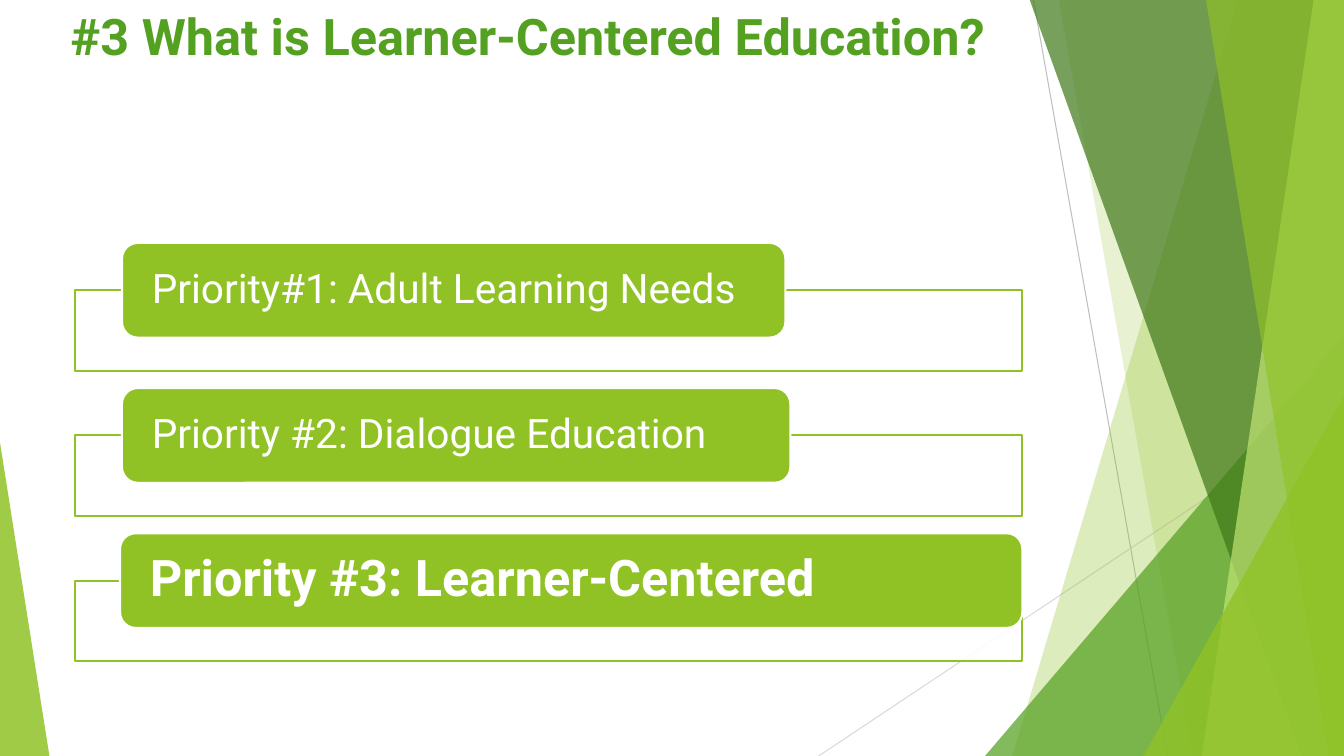
from dataclasses import dataclass

from lxml import etree
from pptx import Presentation
from pptx.dml.color import RGBColor
from pptx.enum.shapes import MSO_CONNECTOR, MSO_SHAPE
from pptx.enum.text import MSO_ANCHOR, PP_ALIGN
from pptx.oxml.ns import qn
from pptx.util import Pt

PX = 9144  # EMU per px, 100 px to the inch
WIDTH, HEIGHT = 1333, 750
BLEED = -1  # facets start just above the slide

RECT, ROUND_RECT = MSO_SHAPE.RECTANGLE, MSO_SHAPE.ROUNDED_RECTANGLE
TRIANGLE, STRAIGHT = MSO_SHAPE.ISOSCELES_TRIANGLE, MSO_CONNECTOR.STRAIGHT
CENTER, TOP, MIDDLE = PP_ALIGN.CENTER, MSO_ANCHOR.TOP, MSO_ANCHOR.MIDDLE
LEFT = PP_ALIGN.LEFT


@dataclass(frozen=True)
class Theme:
    font: str = "Roboto"
    lime: str = "90C226"
    green: str = "54A021"
    forest: str = "3F7819"
    pale: str = "C0E474"
    white: str = "FFFFFF"
    gray: str = "BFBFBF"
    light_gray: str = "D9D9D9"
    large: int = 36
    normal: int = 29
    hairline: float = 0.75
    outline: float = 1.5


THEME = Theme()

# Facets: top left, top right, bottom right, bottom left x; colour; opacity
BACK_FACETS = [
    (1228, WIDTH, WIDTH, 1004, THEME.lime, 30),
    (1050, WIDTH, WIDTH, 1183, THEME.lime, 20),
]
FRONT_FACETS = [
    (1021, WIDTH, WIDTH, 1291, THEME.forest, 70),
    (1303, WIDTH, WIDTH, 1192, THEME.pale, 70),
    (1196, WIDTH, WIDTH, 1318, THEME.lime, 65),
]

# Priorities: text, bar left, bar width, type size, bold
PRIORITIES = [
    ("Priority#1: Adult Learning Needs", 121, 658, THEME.normal, False),
    ("Priority #2: Dialogue Education", 121, 663, THEME.normal, False),
    ("Priority #3: Learner-Centered", 119, 895, THEME.large, True),
]
FIRST_BAR_TOP, PITCH = 241, 144
BAR_HEIGHT, FRAME_DROP = 94, 47


def rgb(color):
    return RGBColor.from_string(color)


def paint(sp, color, opacity=100, line=None):
    """Set fill, opacity and outline, without a shadow."""
    sp.shadow.inherit = False
    sp.fill.solid()
    sp.fill.fore_color.rgb = rgb(color)
    if opacity < 100:
        clr = sp.fill._xPr.find(qn("a:solidFill"))[0]
        etree.SubElement(clr, qn("a:alpha"), val=str(opacity * 1000))
    if line:
        sp.line.color.rgb = rgb(line)
        sp.line.width = Pt(THEME.outline)
    else:
        sp.line.fill.background()


def add_box(s, kind, x, y, w, h):
    return s.shapes.add_shape(kind, x * PX, y * PX, w * PX, h * PX)


def add_line(s, x1, y1, x2, y2, color):
    cxn = s.shapes.add_connector(STRAIGHT, x1 * PX, y1 * PX, x2 * PX, y2 * PX)
    cxn.line.color.rgb = rgb(color)
    cxn.line.width = Pt(THEME.hairline)
    etree.SubElement(cxn._element.spPr, qn("a:effectLst"))


def add_facet(s, top_left, top_right, bottom_right, bottom_left, color, opacity):
    fb = s.shapes.build_freeform(top_left, BLEED, scale=PX)
    fb.add_line_segments(
        [(top_right, BLEED), (bottom_right, HEIGHT), (bottom_left, HEIGHT)]
    )
    paint(fb.convert_to_shape(), color, opacity)


def add_corner(s, x, y, w, apex, color, opacity):
    """Triangle standing on the bottom edge; apex 0 is left, 1 is right."""
    sp = add_box(s, TRIANGLE, x, y, w, HEIGHT - y)
    sp.adjustments[0] = apex
    paint(sp, color, opacity)


def write(sp, text, frame, paragraph, font, color):
    """Put one paragraph in a shape, with its formats given as dicts."""
    tf = sp.text_frame
    p = tf.paragraphs[0]
    r = p.add_run()
    r.text = text
    font = {"name": THEME.font, **font}
    for target, formats in ((tf, frame), (p, paragraph), (r.font, font)):
        for name, value in formats.items():
            setattr(target, name, value)
    r.font.color.rgb = rgb(color)


def add_backdrop(s):
    add_line(s, 1025, 0, 1158, HEIGHT, THEME.gray)
    add_line(s, WIDTH, 403, 812, HEIGHT, THEME.light_gray)
    for facet in BACK_FACETS:
        add_facet(s, *facet)
    add_corner(s, 977, 333, 356, 1, THEME.green, 72)
    for facet in FRONT_FACETS:
        add_facet(s, *facet)
    add_corner(s, 1134, 393, 199, 1, THEME.lime, 80)
    add_corner(s, 0, 439, 49, 0, THEME.lime, 85)


def add_title(s, text):
    sp = s.shapes.title
    sp.left, sp.top, sp.width, sp.height = 0, 0, 1047 * PX, 221 * PX
    write(
        sp, text,
        {"vertical_anchor": TOP, "word_wrap": True},
        {"alignment": CENTER},
        {"size": Pt(THEME.large), "bold": True},
        THEME.green,
    )


def add_priority(s, y, text, x, w, size, bold):
    frame = add_box(s, RECT, 74, y + FRAME_DROP, 940, 80)
    paint(frame, THEME.white, 90, THEME.lime)
    bar = add_box(s, ROUND_RECT, x, y, w, BAR_HEIGHT)
    paint(bar, THEME.lime, line=THEME.white)
    write(
        bar, text,
        {"vertical_anchor": MIDDLE, "word_wrap": True,
         "margin_left": 25 * PX, "margin_right": 25 * PX,
         "margin_top": 0, "margin_bottom": 0},
        {"alignment": LEFT, "line_spacing": 0.9},
        {"size": Pt(size), "bold": bold},
        THEME.white,
    )


def main():
    prs = Presentation()
    prs.slide_width, prs.slide_height = WIDTH * PX, HEIGHT * PX
    s = prs.slides.add_slide(prs.slide_layouts[5])  # Title Only

    add_backdrop(s)
    add_title(s, "#3 What is Learner-Centered Education?")
    for i, priority in enumerate(PRIORITIES):
        add_priority(s, FIRST_BAR_TOP + i * PITCH, *priority)

    prs.save("out.pptx")


if __name__ == "__main__":
    main()
